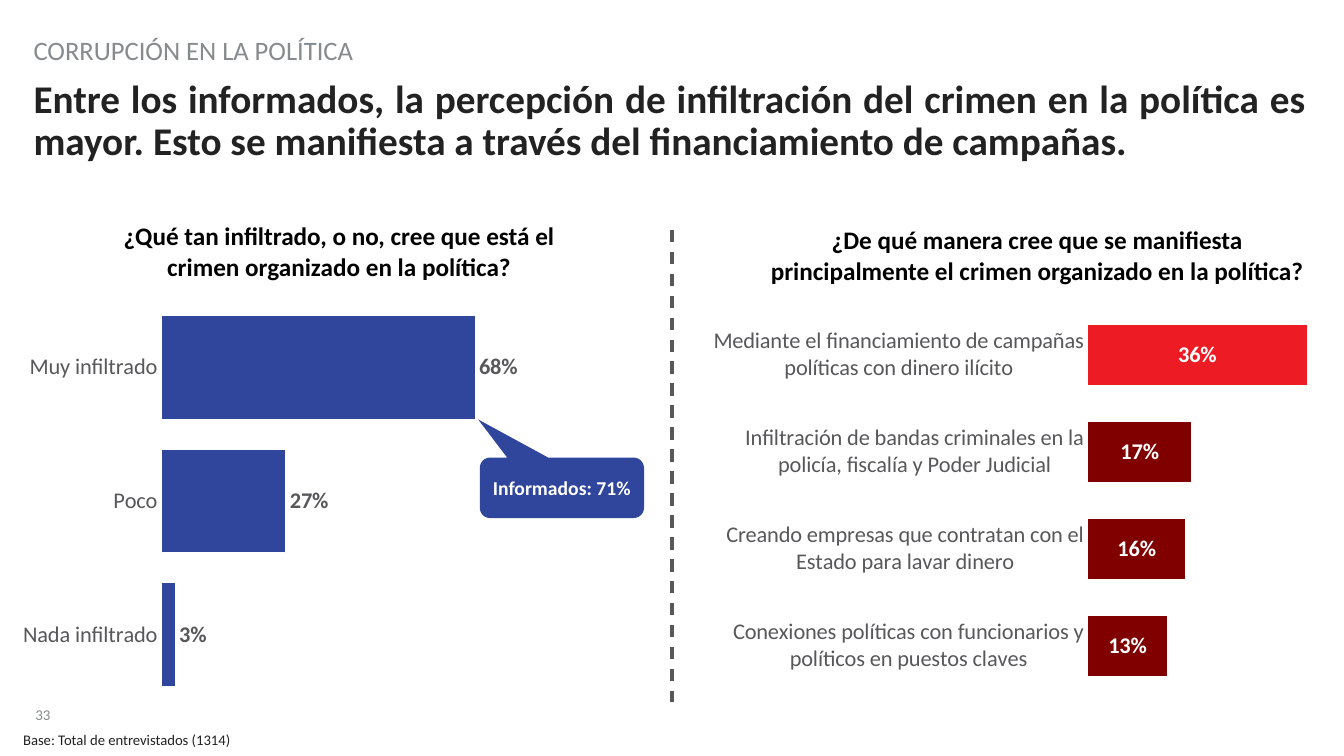
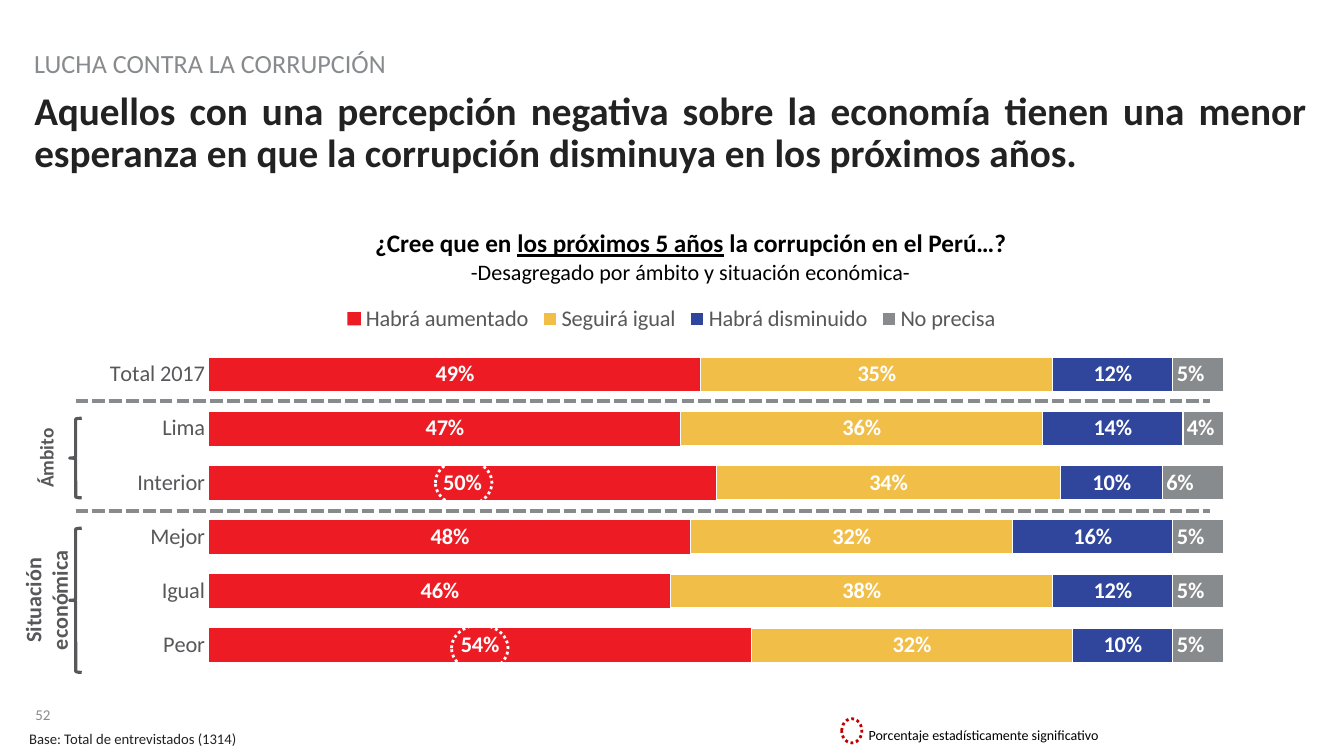
from lxml import etree
from pptx import Presentation
from pptx.chart.data import CategoryChartData
from pptx.dml.color import RGBColor
from pptx.enum.chart import XL_CHART_TYPE as CHART, XL_LABEL_POSITION as LABEL
from pptx.enum.chart import XL_LEGEND_POSITION as LEGEND, XL_TICK_MARK as TICK
from pptx.enum.dml import MSO_LINE as DASH
from pptx.enum.shapes import MSO_CONNECTOR as CONNECTOR, MSO_SHAPE as SHAPE
from pptx.enum.text import MSO_ANCHOR as ANCHOR, PP_ALIGN as ALIGN
from pptx.oxml.ns import qn
from pptx.util import Inches, Pt

COLORS = {
    "ink": "222223", "black": "000000", "text": "58585B", "gray": "888B8D",
    "white": "FFFFFF", "blue": "2F469C", "red": "ED1C24", "maroon": "800000",
    "yellow": "F1BE48", "crimson": "C00000",
}
RGB = {name: RGBColor.from_string(value) for name, value in COLORS.items()}
FONT = "Calibri"
PERCENT = r"0\%"

presentation = Presentation()
presentation.slide_width = Inches(13.33)
presentation.slide_height = Inches(7.5)
COLUMN = presentation.slide_width / 100
ROW = presentation.slide_height / 100
GRID = (COLUMN, ROW, COLUMN, ROW)

PADDED = (Pt(7.2), Pt(3.6))
CENTERED = {"alignment": ALIGN.CENTER}
STYLES = {
    "kicker": {"color": "gray", "frame": {"vertical_anchor": ANCHOR.BOTTOM}},
    "title": {
        "color": "ink", "font": {"size": Pt(28), "bold": True},
        "paragraph": {"alignment": ALIGN.JUSTIFY, "line_spacing": 0.9},
    },
    "number": {
        "color": "gray", "font": {"size": Pt(10.7)},
        "paragraph": {"line_spacing": 0.85},
        "frame": {"vertical_anchor": ANCHOR.BOTTOM},
    },
    "base": {"color": "ink", "font": {"size": Pt(10.5)}, "inset": PADDED},
    "note": {"color": "black", "font": {"size": Pt(10)}, "inset": PADDED},
    "question": {
        "color": "black", "font": {"size": Pt(18), "bold": True},
        "paragraph": CENTERED, "inset": PADDED,
    },
    "callout": {
        "color": "white", "font": {"size": Pt(14), "bold": True},
        "paragraph": CENTERED, "inset": PADDED, "fill": "blue",
        "frame": {"vertical_anchor": ANCHOR.MIDDLE},
    },
    "group": {"color": "text", "font": {"bold": True}, "paragraph": CENTERED},
    "brace": {"line": {"width": Pt(2.25)}, "line_color": "text"},
    "mark": {"line": {"width": Pt(2), "dash_style": DASH.ROUND_DOT}, "line_color": "white"},
    "key": {"line": {"width": Pt(2), "dash_style": DASH.ROUND_DOT}, "line_color": "crimson"},
}


def add_box(slide, box, style_name, paragraphs=(), preset=None):
    style = STYLES[style_name]
    place = [round(share * unit) for share, unit in zip(box, GRID)]
    if preset is None:
        shape = slide.shapes.add_textbox(*place)
    else:
        shape = slide.shapes.add_shape(preset, *place)
        shape.shadow.inherit = False
        if "fill" in style:
            shape.fill.solid()
            shape.fill.fore_color.rgb = RGB[style["fill"]]
        else:
            shape.fill.background()
        if "line" in style:
            shape.line.color.rgb = RGB[style["line_color"]]
            for name, value in style["line"].items():
                setattr(shape.line, name, value)
        else:
            shape.line.fill.background()
    frame = shape.text_frame
    across, down = style.get("inset", (0, 0))
    settings = {
        "word_wrap": True, "margin_left": across, "margin_right": across,
        "margin_top": down, "margin_bottom": down, **style.get("frame", {}),
    }
    for name, value in settings.items():
        setattr(frame, name, value)
    for index, runs in enumerate(paragraphs):
        paragraph = frame.add_paragraph() if index else frame.paragraphs[0]
        for name, value in style.get("paragraph", {}).items():
            setattr(paragraph, name, value)
        for text, changes in runs:
            run = paragraph.add_run()
            run.text = text
            for name, value in {"name": FONT, **style.get("font", {}), **changes}.items():
                setattr(run.font, name, value)
            run.font.color.rgb = RGB[style["color"]]
    return shape


def add_bars(slide, box, kind, categories, rows, gap, maximum=None, layout=None):
    data = CategoryChartData(number_format=PERCENT)
    data.categories = categories
    for row in rows:
        data.add_series(row["name"], row["values"])
    place = [round(share * unit) for share, unit in zip(box, GRID)]
    chart = slide.shapes.add_chart(kind, *place, data).chart
    chart.has_title = False
    chart.has_legend = len(rows) > 1
    fonts = [(chart.font, 10, "ink", False), (chart.category_axis.tick_labels.font, 16, "text", False)]
    if chart.has_legend:
        chart.legend.position = LEGEND.TOP
        chart.legend.include_in_layout = False
        fonts.append((chart.legend.font, 16, "text", False))
    category_axis, value_axis = chart.category_axis, chart.value_axis
    category_axis.reverse_order = True
    category_axis.major_tick_mark = TICK.NONE
    category_axis.format.line.fill.background()
    value_axis.has_major_gridlines = False
    value_axis.minimum_scale = 0
    if maximum:
        value_axis.maximum_scale = maximum
    value_axis.visible = False
    plot = chart.plots[0]
    plot.gap_width = gap
    plot.vary_by_categories = False
    if len(rows) > 1:
        plot.overlap = 100
    for series, row in zip(plot.series, rows):
        series.format.fill.solid()
        series.format.fill.fore_color.rgb = RGB[row["color"]]
        if row.get("outlined"):
            series.format.line.color.rgb = RGB["white"]
            series.format.line.width = Pt(0.75)
        else:
            series.format.line.fill.background()
        for index, color in row.get("points", {}).items():
            fill = series.points[index].format.fill
            fill.solid()
            fill.fore_color.rgb = RGB[color]
        labels = series.data_labels
        settings = {
            "show_value": True, "number_format": PERCENT,
            "number_format_is_linked": False, "position": row.get("position", LABEL.CENTER),
        }
        for name, value in settings.items():
            setattr(labels, name, value)
        fonts.append((labels.font, 16, row.get("label_color", "white"), True))
    for font, size, color, bold in fonts:
        for name, value in {"name": FONT, "size": Pt(size), "bold": bold}.items():
            setattr(font, name, value)
        font.color.rgb = RGB[color]
    if layout:
        plot_area = chart.element.find(".//" + qn("c:plotArea"))
        for old in plot_area.findall(qn("c:layout")):
            plot_area.remove(old)
        outer = etree.Element(qn("c:layout"))
        manual = etree.SubElement(outer, qn("c:manualLayout"))
        settings = {"layoutTarget": "inner", "xMode": "edge", "yMode": "edge"}
        settings.update(zip("xywh", layout))
        for name, value in settings.items():
            etree.SubElement(manual, qn("c:" + name)).set("val", str(value))
        plot_area.insert(0, outer)


PAGES = [
    {
        "number": "33", "kicker": "CORRUPCIÓN EN LA POLÍTICA", "kicker_size": 19,
        "title": "Entre los informados, la percepción de infiltración del crimen en la política es mayor. "
                 "Esto se manifiesta a través del financiamiento de campañas.",
        "left": 2.5, "title_top": 10.5, "base_at": (0.98, 96),
    },
    {
        "number": "52", "kicker": "LUCHA CONTRA LA CORRUPCIÓN", "kicker_size": 18.7,
        "title": "Aquellos con una percepción negativa sobre la economía tienen una menor esperanza "
                 "en que la corrupción disminuya en los próximos años.",
        "left": 2.55, "title_top": 12.1, "base_at": (1.43, 95.87),
    },
]
KICKER_HEIGHT, KICKER_GAP = 5.6, 1.73
slides = []
for page in PAGES:
    slide = presentation.slides.add_slide(presentation.slide_layouts[6])
    slides.append(slide)
    left, top = page["left"], page["title_top"]
    kicker_top = top - KICKER_GAP - KICKER_HEIGHT
    add_box(slide, (2.63, 91.07, 3.37, 4.67), "number", [[(page["number"], {})]])
    add_box(slide, (left, top, 94.65, 11.33), "title", [[(page["title"], {})]])
    add_box(slide, (left, kicker_top, 73.6, KICKER_HEIGHT), "kicker",
            [[(page["kicker"], {"size": Pt(page["kicker_size"])})]])
    add_box(slide, (*page["base_at"], 17.7, 2.67), "base",
            [[("Base: Total de entrevistados (1314)", {})]])
infiltration, outlook = slides

add_bars(
    infiltration, (0, 31.87, 40.57, 60.93), CHART.BAR_CLUSTERED,
    ["Muy infiltrado", "Poco", "Nada infiltrado"],
    [{"name": "Series 1", "values": [68, 27, 3], "color": "blue", "outlined": True,
      "position": LABEL.OUTSIDE_END, "label_color": "text"}],
    gap=29, maximum=80, layout=(0.296, 0.13, 0.677, 0.87),
)
add_bars(
    infiltration, (52.13, 39.47, 47.85, 53.47), CHART.BAR_CLUSTERED,
    ["Mediante el financiamiento de campañas políticas con dinero ilícito",
     "Infiltración de bandas criminales en la policía, fiscalía y Poder Judicial",
     "Creando empresas que contratan con el Estado para lavar dinero",
     "Conexiones políticas con funcionarios y políticos en puestos claves"],
    [{"name": "Series 1", "values": [36, 17, 16, 13], "color": "maroon", "points": {0: "red"}}],
    gap=60, maximum=40,
)
callout = add_box(infiltration, (35.7, 60.53, 12.22, 8), "callout",
                  [[("Informados: 71%", {})]], SHAPE.ROUNDED_RECTANGULAR_CALLOUT)
for index, value in enumerate((-0.51, -1.13, 0.17)):
    callout.adjustments[index] = value
for box, question in [
    ((6.22, 28.53, 38.03, 9.47),
     "¿Qué tan infiltrado, o no, cree que está el crimen organizado en la política?"),
    ((55.2, 29.07, 43.95, 9.47),
     "¿De qué manera cree que se manifiesta principalmente el crimen organizado en la política?"),
]:
    add_box(infiltration, box, "question", [[(question, {})]])

add_box(outlook, (24.67, 29.47, 53.47, 8.93), "question", [
    [("¿Cree que en ", {}), ("los próximos 5 años", {"underline": True}),
     (" la corrupción en el Perú…?", {})],
    [("-Desagregado por ámbito y situación económica-", {"size": Pt(15.8), "bold": False})],
])
add_bars(
    outlook, (5.03, 38.8, 89.85, 50.13), CHART.BAR_STACKED_100,
    ["Total 2017", "Lima", "Interior", "Mejor", "Igual", "Peor"],
    [{"name": "Habrá aumentado", "values": [49, 47, 50, 48, 46, 54], "color": "red"},
     {"name": "Seguirá igual", "values": [35, 36, 34, 32, 38, 32], "color": "yellow", "outlined": True},
     {"name": "Habrá disminuido", "values": [12, 14, 10, 16, 12, 10], "color": "blue", "outlined": True},
     {"name": "No precisa", "values": [5, 4, 6, 5, 5, 5], "color": "gray", "outlined": True,
      "position": LABEL.INSIDE_BASE}],
    gap=60, layout=(0.117, 0.143, 0.84, 0.857),
)

for slide, ends, color, width, dash in [
    (infiltration, (50, 30.4, 50, 92.8), "text", 2.25, DASH.DASH),
    (outlook, (5.63, 53, 90, 53), "gray", 3, DASH.SQUARE_DOT),
    (outlook, (5.63, 67.6, 90, 67.6), "gray", 3, DASH.SQUARE_DOT),
]:
    place = [round(share * unit) for share, unit in zip(ends, GRID)]
    connector = slide.shapes.add_connector(CONNECTOR.STRAIGHT, *place)
    connector.line.color.rgb = RGB[color]
    for name, value in {"width": Pt(width), "dash_style": dash}.items():
        setattr(connector.line, name, value)
    etree.SubElement(connector.element.spPr, qn("a:effectLst"))

for text, size, top, height, text_height in [
    ("Situación económica", 15.8, 69.87, 19.07, 7.07),
    ("Ámbito", 13.8, 55.33, 10.53, 3.07),
]:
    add_box(outlook, (5.18, top, 0.9, height), "brace", preset=SHAPE.LEFT_BRACE)
    text_top = top + (height - text_height) / 2
    label = add_box(outlook, (-1.95, text_top, 10.73, text_height), "group",
                    [[(text, {"size": Pt(size)})]])
    label.rotation = 270

add_box(outlook, (63.9, 95.47, 19.35, 3.6), "note",
        [[("Porcentaje estadísticamente significativo", {})]])
for box, style_name in [
    ((62.63, 95.07, 1.5, 3.2), "key"),
    ((33.6, 82.67, 4.2, 6.13), "mark"),
    ((32.4, 60.8, 4.2, 6.13), "mark"),
]:
    add_box(outlook, box, style_name, preset=SHAPE.OVAL)

presentation.save("out.pptx")
